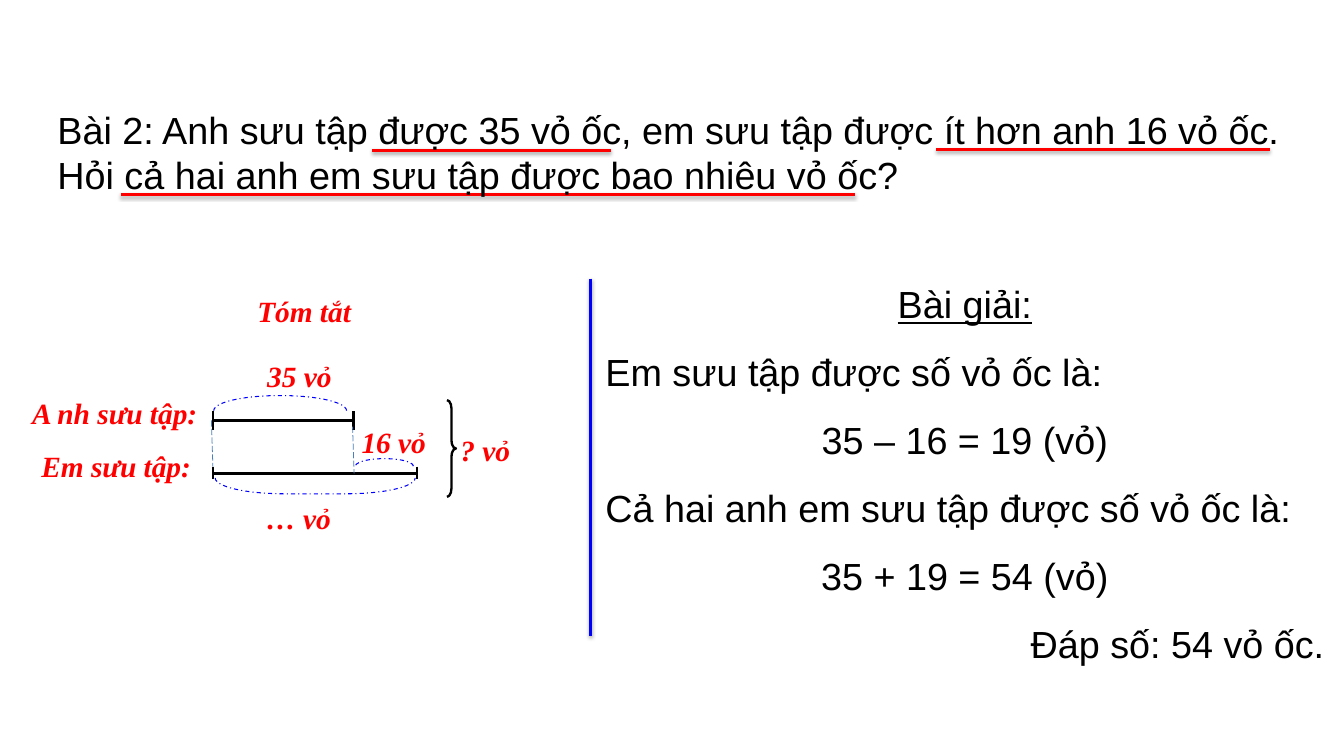
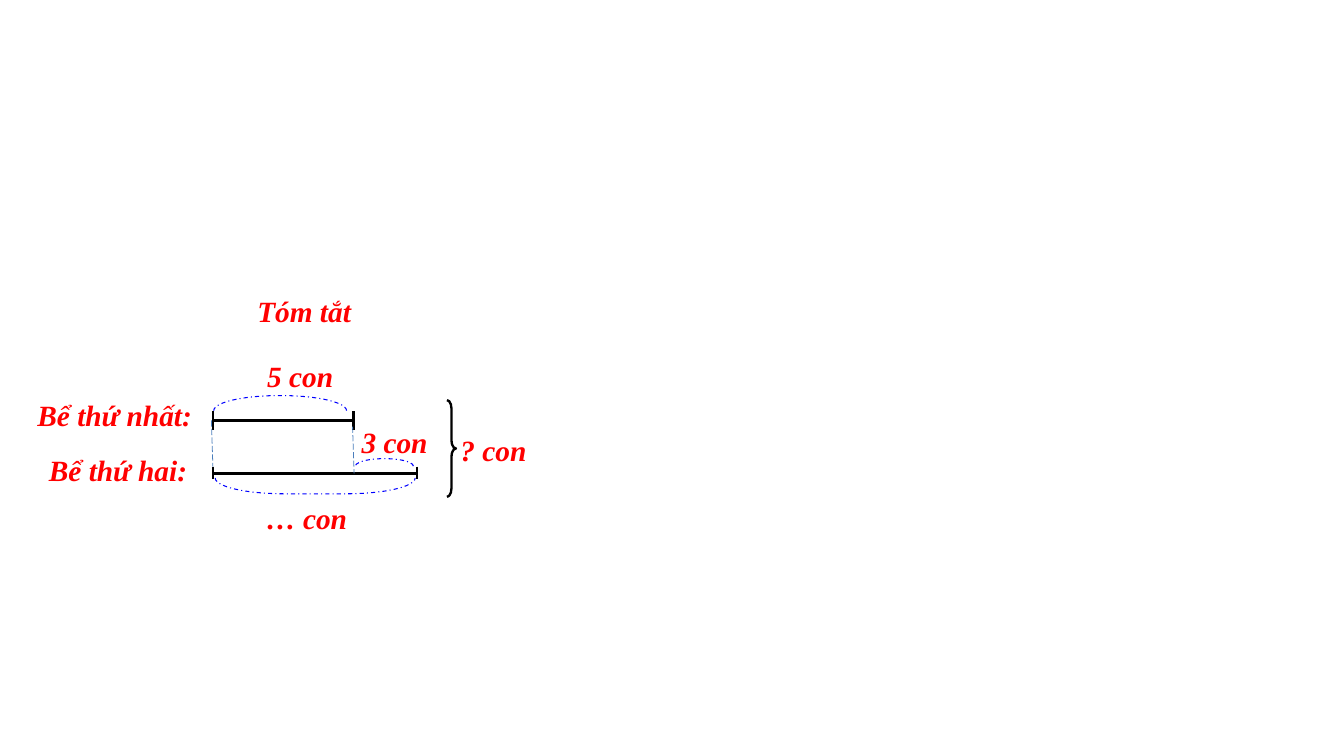
import pptx
import pptx.dml.color
import pptx.enum.dml
import pptx.enum.shapes
import pptx.enum.text
import pptx.oxml
import pptx.oxml.ns
import pptx.util

Pt = pptx.util.Pt
RGB = pptx.dml.color.RGBColor
ALIGN = pptx.enum.text.PP_ALIGN
DASH = pptx.enum.dml.MSO_LINE
SHAPE = pptx.enum.shapes.MSO_SHAPE

BLACK = RGB(0x00, 0x00, 0x00)
RED = RGB(0xFF, 0x00, 0x00)
BLUE = RGB(0x00, 0x00, 0xFF)
STEEL = RGB(0x4B, 0x7E, 0xBC)

READING = {"name": "Arial", "size": Pt(36)}
LABEL = {"name": "Times New Roman", "size": Pt(28), "bold": True, "italic": True}

PROBLEM = (
    "Bài 2: Anh sưu tập được 35 vỏ ốc, em sưu tập được ít hơn anh 16 vỏ ốc. "
    "Hỏi cả hai anh em sưu tập được bao nhiêu vỏ ốc?"
)
PROBLEM_BOX = (47.5, 97.9, 1234.1, 94.3)
SOLUTION = [
    ("Bài giải:", ALIGN.CENTER, True),
    ("Em sưu tập được số vỏ ốc là:", ALIGN.LEFT, False),
    ("35 – 16 = 19 (vỏ)", ALIGN.CENTER, False),
    ("Cả hai anh em sưu tập được số vỏ ốc là:", ALIGN.LEFT, False),
    ("35 + 19 = 54 (vỏ)", ALIGN.CENTER, False),
    ("Đáp số: 54 vỏ ốc.", ALIGN.RIGHT, False),
]
SOLUTION_BOX = (570.2, 242.6, 699.8, 457.2)
DIVIDER = (563, 265.7, 563, 606.2)
UNDERLINES = [
    (355, 143.3, 582.5, 143.3),
    (892.8, 142.6, 1211, 142.6),
    (115.2, 185.8, 815, 185.8),
]

SHELL_LABELS = [
    ("A nh sưu tập:", 23.6, 373, 199),
    ("Em sưu tập:", 32.4, 423.4, 249),
    ("35 vỏ", 247.7, 337.7, 172),
    ("16 vỏ", 337.7, 401, 95.8),
    ("? vỏ", 432, 408.2, 95.8),
    ("… vỏ", 247, 473.8, 167.8),
]
FISH_LABELS = [
    ("Bể thứ nhất:", 28.6, 375.1, 199),
    ("Bể thứ hai:", 39.6, 427.7, 249),
    ("5 con", 247.7, 337.7, 83.5),
    ("3 con", 337.7, 401, 95.8),
    ("? con", 432, 408.2, 95.8),
    ("… con", 247, 473.8, 167.8),
]
HEADING = ("Tóm tắt", 238.3, 276.5, 257)
LABEL_HEIGHT = 41

SEGMENTS = [(203, 337, 401, 392.4, 410.4), (203, 397.4, 451.4, 445, 457.2)]
ARCS = [
    (259.9, 321.1, 14.4, 126.7, 270),
    (293, 367.9, 15.1, 190.8, 90),
    (362.9, 413.3, 7.2, 55.4, 270),
]
GUIDES = [(201.6, 401, 203, 445), (336.2, 406.8, 337.7, 451.4)]
TOTAL_BRACE = (426.2, 381.6, 8.6, 92.2)

EFFECTS = '<a:effectLst %s>%s</a:effectLst>'
SHADOW = (
    '<a:outerShdw blurRad="40000" dist="23000" dir="5400000" rotWithShape="0">'
    '<a:srgbClr val="000000"><a:alpha val="35000"/></a:srgbClr></a:outerShdw>'
)


def points(values):
    return [Pt(value) for value in values]


def format_line(line, color, width, dash=None):
    line.color.rgb = color
    line.width = Pt(width)
    if dash is not None:
        line.dash_style = dash


def add_line(shapes, ends, color, width, dash=None, shadow=""):
    line = shapes.add_connector(
        pptx.enum.shapes.MSO_CONNECTOR.STRAIGHT, *points(ends))
    format_line(line.line, color, width, dash)
    effects = EFFECTS % (pptx.oxml.ns.nsdecls("a"), shadow)
    line._element.spPr.append(pptx.oxml.parse_xml(effects))


def add_outline(shapes, kind, box, adjustments, color, width, dash=None):
    outline = shapes.add_shape(kind, *points(box))
    outline.shadow.inherit = False
    outline.fill.background()
    format_line(outline.line, color, width, dash)
    for index, value in enumerate(adjustments):
        outline.adjustments[index] = value
    return outline


def fit_frame(frame):
    frame.word_wrap = True
    frame.auto_size = pptx.enum.text.MSO_AUTO_SIZE.SHAPE_TO_FIT_TEXT
    frame.vertical_anchor = pptx.enum.text.MSO_ANCHOR.TOP


def write(paragraph, text, style, color, align=ALIGN.LEFT):
    paragraph.alignment = align
    run = paragraph.add_run()
    run.text = text
    for attribute, value in style.items():
        setattr(run.font, attribute, value)
    run.font.color.rgb = color


def draw_summary(shapes, labels):
    for text, left, top, width in labels + [HEADING]:
        label = shapes.add_textbox(*points((left, top, width, LABEL_HEIGHT)))
        fit_frame(label.text_frame)
        write(label.text_frame.paragraphs[0], text, LABEL, RED)
    add_outline(shapes, SHAPE.RIGHT_BRACE, TOTAL_BRACE, (0.914, 0.5), BLACK, 2.25)
    for start, end, y, tick_top, tick_bottom in SEGMENTS:
        segment = shapes.add_group_shape().shapes
        add_line(segment, (start, y, end, y), BLACK, 2.25)
        for x in (start, end):
            add_line(segment, (x, tick_top, x, tick_bottom), BLACK, 2.25)
    for *box, rotation in ARCS:
        arc = add_outline(
            shapes, SHAPE.RIGHT_BRACKET, box, (4.363,), BLUE, 1, DASH.DASH_DOT)
        arc.rotation = rotation
        arc._element.spPr.xfrm.set("flipV", "1")
    for guide in GUIDES:
        add_line(shapes, guide, STEEL, 0.75, DASH.LONG_DASH)


def draw_problem(slide):
    shapes = slide.shapes
    add_line(shapes, DIVIDER, BLUE, 3, shadow=SHADOW)
    for underline in UNDERLINES:
        add_line(shapes, underline, RED, 3, shadow=SHADOW)
    solution = shapes.add_textbox(*points(SOLUTION_BOX)).text_frame
    fit_frame(solution)
    for index, (text, align, underlined) in enumerate(SOLUTION):
        step = solution.add_paragraph() if index else solution.paragraphs[0]
        step.line_spacing = 1.5
        write(step, text, {**READING, "underline": underlined}, BLACK, align)
    problem = shapes.title
    shapes._spTree.append(problem._element)
    problem.left, problem.top, problem.width, problem.height = points(PROBLEM_BOX)
    fit_frame(problem.text_frame)
    write(problem.text_frame.paragraphs[0], PROBLEM, READING, BLACK)


def main():
    deck = pptx.Presentation()
    deck.slide_width, deck.slide_height = points((1281.6, 720))
    title_only, blank = deck.slide_layouts[5], deck.slide_layouts[6]

    shells = deck.slides.add_slide(title_only)
    draw_problem(shells)
    draw_summary(shells.shapes, SHELL_LABELS)

    fish = deck.slides.add_slide(blank)
    draw_summary(fish.shapes, FISH_LABELS)
    deck.save("out.pptx")


if __name__ == "__main__":
    main()
